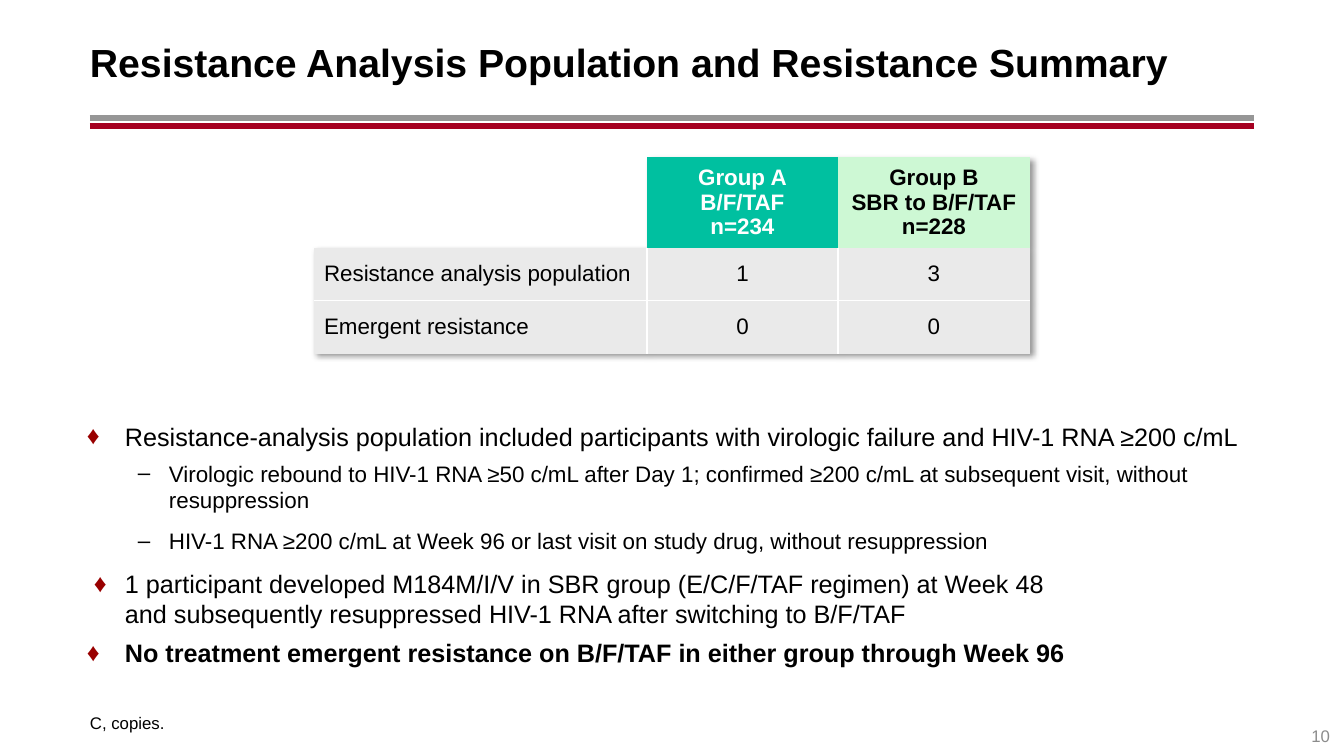
from lxml.etree import SubElement
from pptx import Presentation
from pptx.dml.color import RGBColor
from pptx.enum.shapes import MSO_CONNECTOR
from pptx.enum.text import MSO_ANCHOR, PP_ALIGN
from pptx.oxml import parse_xml
from pptx.oxml.ns import nsdecls, qn
from pptx.util import Emu, Pt

COLORS = {"black": "000000", "white": "FFFFFF", "gray": "969696", "red": "A50021",
          "bullet": "990000", "number": "8C8C8C", "teal": "00C0A0",
          "mint": "CDF8D4", "cell": "EAEAEA"}
FONT = "Arial"

TITLE = "Resistance Analysis Population and Resistance Summary"
FOOTNOTE = "C, copies."
PAGE = "10"
RULES = [(118, "gray"), (126, "red")]

GROUPS = [
    (["Group A\nB/F/TAF", "n=234"], "white", "teal"),
    (["Group B\nSBR to B/F/TAF", "n=228"], "black", "mint"),
]
ROWS = [
    ("Resistance analysis population", "1", "3"),
    ("Emergent resistance", "0", "0"),
]
COL_WIDTHS = [333, 191, 192]
ROW_HEIGHTS = [84, 53, 53]

# level, hanging px, space before pt, bold, text
BULLETS = [
    (0, 38, 0, False, "Resistance-analysis population included participants with "
                      "virologic failure and HIV-1 RNA ≥200 c/mL"),
    (1, 31, 0, False, "Virologic rebound to HIV-1 RNA ≥50 c/mL after Day 1; confirmed "
                      "≥200 c/mL at subsequent visit, without resuppression"),
    (1, 31, 4, False, "HIV-1 RNA ≥200 c/mL at Week 96 or last visit on study drug, "
                      "without resuppression"),
    (0, 31, 4, False, "1 participant developed M184M/I/V in SBR group (E/C/F/TAF regimen) "
                      "at Week 48 \nand subsequently resuppressed HIV-1 RNA after "
                      "switching to B/F/TAF"),
    (0, 38, 0, True, "No treatment emergent resistance on B/F/TAF in either group "
                     "through Week 96"),
]
LEVELS = [(38, 18, "♦", "bullet"), (82, 16, "–", "black")]


def px(n):
    return Emu(round(n * 914400 / 100.8))


def rgb(name):
    return RGBColor.from_string(COLORS[name])


def write(p, text, size, color="black", bold=False, align=PP_ALIGN.LEFT):
    p.alignment = align
    for i, line in enumerate(text.split("\n")):
        if i:
            p.add_line_break()
        r = p.add_run()
        r.text = line
        r.font.name = FONT
        r.font.size = Pt(size)
        r.font.bold = bold
        r.font.color.rgb = rgb(color)


def text_box(s, x, y, w, h, anchor, side=0):
    tf = s.shapes.add_textbox(px(x), px(y), px(w), px(h)).text_frame
    tf.word_wrap = True
    tf.vertical_anchor = anchor
    tf.margin_left = tf.margin_right = px(side)
    tf.margin_top = tf.margin_bottom = px(5)
    return tf


def add_rule(s, y, color):
    line = s.shapes.add_connector(MSO_CONNECTOR.STRAIGHT, px(90), px(y), px(1254), px(y))
    line.line.width = Pt(4.25)
    line.line.color.rgb = rgb(color)
    SubElement(line._element.spPr, qn("a:effectLst"))


def add_bullet(p, level, hang, before, bold, text):
    left, size, mark, color = LEVELS[level]
    p.level = level
    p.space_before, p.space_after = Pt(before), Pt(6)
    write(p, text, size, bold=bold)
    pPr = p._p.get_or_add_pPr()
    pPr.set("marL", str(px(left)))
    pPr.set("indent", str(px(-hang)))
    SubElement(SubElement(pPr, qn("a:buClr")), qn("a:srgbClr"), val=COLORS[color])
    SubElement(pPr, qn("a:buFont"), typeface=FONT)
    SubElement(pPr, qn("a:buChar"), char=mark)


def fill_cell(cell, paragraphs, fill, color="black", bold=False, align=PP_ALIGN.CENTER):
    cell.vertical_anchor = MSO_ANCHOR.MIDDLE
    cell.fill.solid()
    cell.fill.fore_color.rgb = rgb(fill)
    tf = cell.text_frame
    for i, text in enumerate(paragraphs):
        p = tf.add_paragraph() if i else tf.paragraphs[0]
        write(p, text, 16, color, bold, align)


def add_borders(cell, sides):
    tcPr = cell._tc.get_or_add_tcPr()
    for i, side in enumerate(sides):
        tcPr.insert(i, parse_xml(
            f'<a:{side} {nsdecls("a")} w="12700"><a:solidFill>'
            f'<a:srgbClr val="{COLORS["white"]}"/></a:solidFill></a:{side}>'))


def add_table(s):
    table = s.shapes.add_table(len(ROWS) + 1, len(COL_WIDTHS), px(314), px(157),
                               px(sum(COL_WIDTHS)), px(sum(ROW_HEIGHTS))).table
    table.first_row = table.horz_banding = False
    tblPr = table._tbl.tblPr
    tblPr.find(qn("a:tableStyleId")).text = "{2D5ABB26-0587-4C30-8999-92F81FD0307C}"
    tblPr.insert(0, parse_xml(
        f'<a:effectLst {nsdecls("a")}><a:outerShdw blurRad="50800" dist="38100" '
        f'dir="2700000" algn="tl" rotWithShape="0"><a:srgbClr val="{COLORS["black"]}">'
        '<a:alpha val="40000"/></a:srgbClr></a:outerShdw></a:effectLst>'))
    for col, width in zip(table.columns, COL_WIDTHS):
        col.width = px(width)
    for row, height in zip(table.rows, ROW_HEIGHTS):
        row.height = px(height)
    table.cell(0, 0).fill.background()
    for c, (lines, color, fill) in enumerate(GROUPS, 1):
        fill_cell(table.cell(0, c), lines, fill, color, True)
    for r, values in enumerate(ROWS, 1):
        for c, value in enumerate(values):
            cell = table.cell(r, c)
            fill_cell(cell, [value], "cell",
                      align=PP_ALIGN.CENTER if c else PP_ALIGN.LEFT)
            inner = {"lnL": c > 0, "lnR": c < len(values) - 1,
                     "lnT": r > 1, "lnB": r < len(ROWS)}
            add_borders(cell, [side for side, shown in inner.items() if shown])


def main():
    prs = Presentation()
    prs.slide_width, prs.slide_height = px(1344), px(756)
    s = prs.slides.add_slide(prs.slide_layouts[6])
    for y, color in RULES:
        add_rule(s, y, color)
    tf = text_box(s, 90, 18, 1165, 87, MSO_ANCHOR.MIDDLE)
    write(tf.paragraphs[0], TITLE, 28, bold=True)
    tf = text_box(s, 87, 416, 1193, 248, MSO_ANCHOR.TOP)
    for i, bullet in enumerate(BULLETS):
        add_bullet(tf.add_paragraph() if i else tf.paragraphs[0], *bullet)
    tf = text_box(s, 90, 688, 1165, 50, MSO_ANCHOR.BOTTOM)
    write(tf.paragraphs[0], FOOTNOTE, 12)
    tf = text_box(s, 1254, 716, 86, 40, MSO_ANCHOR.MIDDLE, 10)
    write(tf.paragraphs[0], PAGE, 12, "number", align=PP_ALIGN.RIGHT)
    add_table(s)
    prs.save("out.pptx")


if __name__ == "__main__":
    main()
